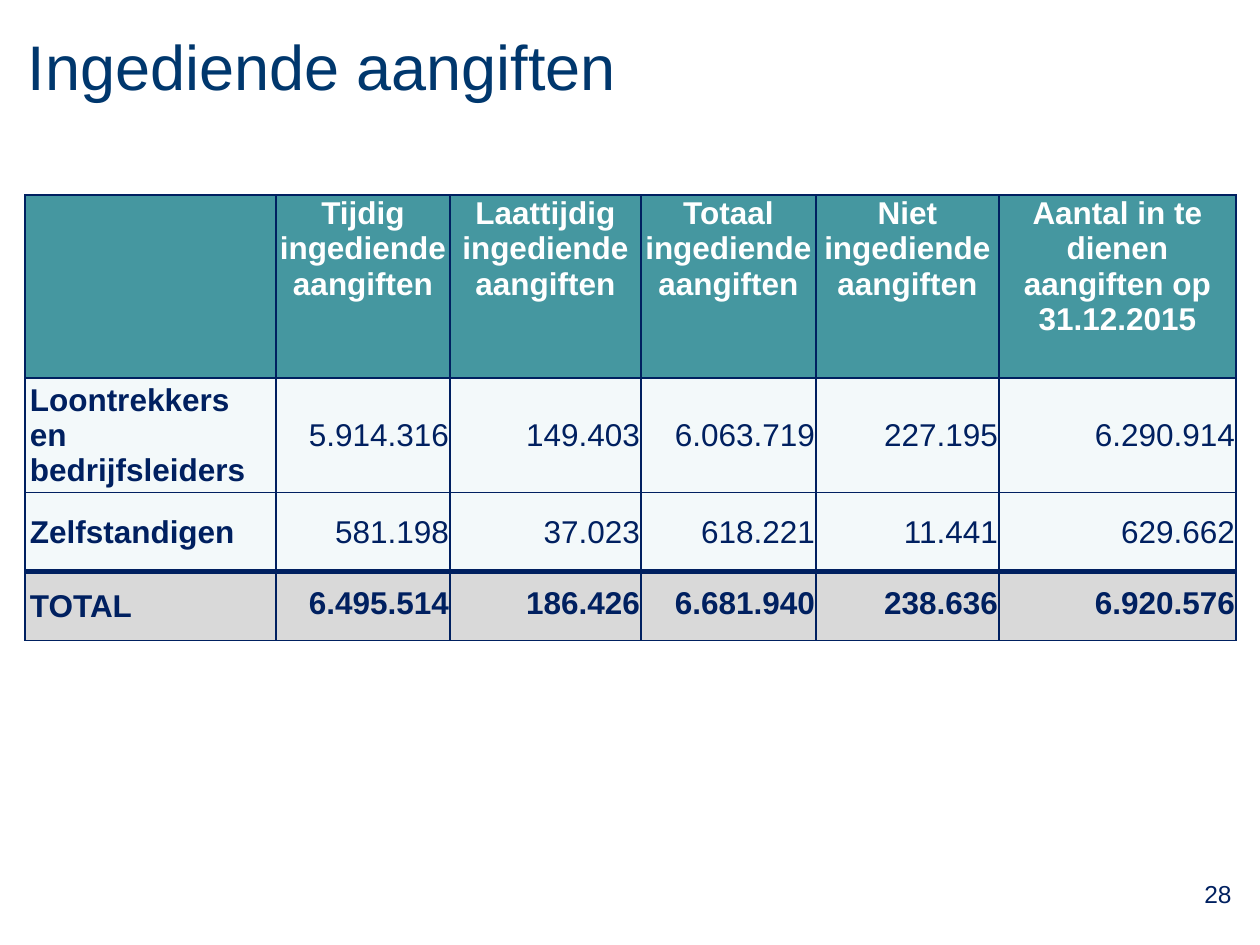
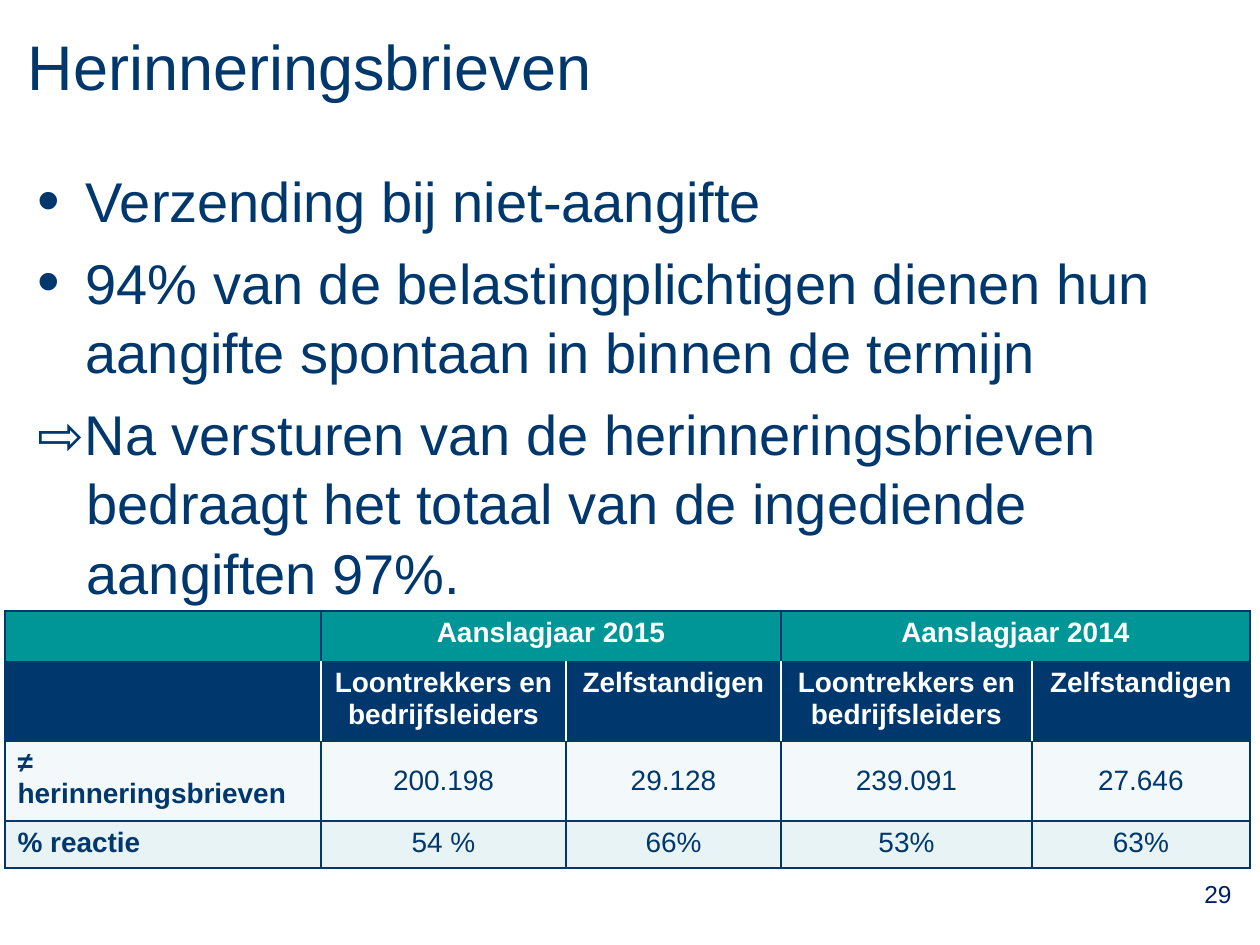
from lxml import etree
from pptx import Presentation
from pptx import util as u
from pptx.dml.color import RGBColor
from pptx.enum import text
from pptx.oxml import ns

PX = 914400 / 126
FONT = "Arial"
BLUE = RGBColor(0x00, 0x37, 0x6D)
NAVY = RGBColor(0x00, 0x20, 0x60)
WHITE = RGBColor(0xFF, 0xFF, 0xFF)
TEAL = RGBColor(0x45, 0x97, 0xA0)
GREEN = RGBColor(0x00, 0x96, 0x97)
PALE = RGBColor(0xF3, 0xF9, 0xFA)
PALE_GREEN = RGBColor(0xE7, 0xF3, 0xF4)
GREY = RGBColor(0xD9, 0xD9, 0xD9)
LEFT, CENTER, RIGHT = text.PP_ALIGN.LEFT, text.PP_ALIGN.CENTER, text.PP_ALIGN.RIGHT
TOP, MIDDLE = text.MSO_ANCHOR.TOP, text.MSO_ANCHOR.MIDDLE


def add_text(p, words, size, color, align=LEFT, bold=False):
    p.alignment = align
    r = p.add_run()
    r.text = words
    r.font.name, r.font.size, r.font.bold = FONT, u.Pt(size), bold
    r.font.color.rgb = color


def paint_cell(cell, fill, borders):
    """Fill a cell and draw its borders, given as side: (colour, points)."""
    cell.fill.solid()
    cell.fill.fore_color.rgb = fill
    tcPr = cell._tc.get_or_add_tcPr()
    for i, side in enumerate("LRTB"):
        color, width = borders[side]
        ln = etree.Element(ns.qn(f"a:ln{side}"), w=str(u.Pt(width)))
        solid = etree.SubElement(ln, ns.qn("a:solidFill"))
        etree.SubElement(solid, ns.qn("a:srgbClr"), val=str(color))
        tcPr.insert(i, ln)


prs = Presentation()
prs.slide_width, prs.slide_height = u.Inches(10), u.Inches(7.5)

# Shared title and page number
slides = []
for layout, title, number in [(5, "Ingediende aangiften", "28"),
                              (1, "Herinneringsbrieven", "29")]:
    s = prs.slides.add_slide(prs.slide_layouts[layout])
    sp = s.shapes.title
    sp.left, sp.top, sp.width, sp.height = [int(v * PX) for v in (15, 14, 1181, 102)]
    tf = sp.text_frame
    tf.auto_size, tf.vertical_anchor = text.MSO_AUTO_SIZE.NONE, MIDDLE
    add_text(tf.paragraphs[0], title, 36, BLUE)
    sp = s.shapes.add_textbox(*[int(v * PX) for v in (1171, 873, 94, 66)])
    sp.text_frame.word_wrap = True
    add_text(sp.text_frame.paragraphs[0], number, 14, NAVY, CENTER)
    slides.append(s)
returns_slide, reminders_slide = slides

# Bulleted list on reminder letters
sp = reminders_slide.placeholders[1]
sp.left, sp.top, sp.width, sp.height = [int(v * PX) for v in (25, 158, 1211, 760)]
tf = sp.text_frame
tf.auto_size = text.MSO_AUTO_SIZE.NONE
points = [
    ("Verzending bij niet-aangifte", 48, True),
    ("94% van de belastingplichtigen dienen hun aangifte spontaan in binnen de termijn",
     48, True),
    ("⇨Na versturen van de herinneringsbrieven bedraagt het totaal van de "
     "ingediende aangiften 97%.", 49, False),
]
for i, (words, indent, bulleted) in enumerate(points):
    p = tf.add_paragraph() if i else tf.paragraphs[0]
    pPr = p._p.get_or_add_pPr()
    pPr.set("marL", str(int(indent * PX)))
    pPr.set("indent", str(int(-indent * PX)))
    if bulleted:
        clr = etree.SubElement(pPr, ns.qn("a:buClr"))
        etree.SubElement(clr, ns.qn("a:srgbClr"), val=str(BLUE))
        etree.SubElement(pPr, ns.qn("a:buSzPct"), val="115000")
        etree.SubElement(pPr, ns.qn("a:buFont"), typeface=FONT)
        etree.SubElement(pPr, ns.qn("a:buChar"), char="•")
    else:
        etree.SubElement(pPr, ns.qn("a:buNone"))
    p.line_spacing = 1.04
    p.space_before = u.Pt(6.4 if i else 0)
    add_text(p, words, 32, BLUE)

# Table of filed returns
rows = [
    ["", "Tijdig ingediende aangiften", "Laattijdig ingediende aangiften",
     "Totaal ingediende aangiften", "Niet ingediende aangiften",
     "Aantal in te dienen aangiften op 31.12.2015"],
    ["Loontrekkers en bedrijfsleiders", "5.914.316", "149.403", "6.063.719",
     "227.195", "6.290.914"],
    ["Zelfstandigen", "581.198", "37.023", "618.221", "11.441", "629.662"],
    ["TOTAL", "6.495.514", "186.426", "6.681.940", "238.636", "6.920.576"],
]
widths, heights = [251, 174, 191, 175, 183, 237], [183, 108, 79, 69]
fills = [TEAL, PALE, PALE, GREY]
frame = returns_slide.shapes.add_table(
    4, 6, *[int(v * PX) for v in (25, 195, sum(widths), sum(heights))])
table = frame.table
for column, width in zip(table.columns, widths):
    column.width = int(width * PX)
for r, row in enumerate(rows):
    table.rows[r].height = int(heights[r] * PX)
    header, total = r == 0, r == 3
    for c, words in enumerate(row):
        cell = table.cell(r, c)
        borders = dict.fromkeys("LRTB", (NAVY, 1))
        if r == 2:
            borders["B"] = (NAVY, 3)
        if total:
            borders["T"] = (NAVY, 3)
        paint_cell(cell, fills[r], borders)
        cell.vertical_anchor = TOP if header else MIDDLE
        cell.margin_left = int((1 if c or header else 5) * PX)
        cell.margin_right = cell.margin_top = int(PX)
        cell.margin_bottom = int((5 if total and c else 0) * PX)
        align = CENTER if header else RIGHT if c else LEFT
        add_text(cell.text_frame.paragraphs[0], words, 18, WHITE if header else NAVY,
                 align, header or total or c == 0)

# Table of reminder letters
rows = [
    ["", "Aanslagjaar 2015", "", "Aanslagjaar 2014", ""],
    [""] + ["Loontrekkers en bedrijfsleiders", "Zelfstandigen"] * 2,
    ["≠ herinneringsbrieven", "200.198", "29.128", "239.091", "27.646"],
    ["% reactie", "54 %", "66%", "53%", "63%"],
]
widths, heights = [316, 245, 215, 251, 218], [46, 77, 75, 47]
fills = [GREEN, BLUE, PALE, PALE_GREEN]
frame = reminders_slide.shapes.add_table(
    4, 5, *[int(v * PX) for v in (5, 611, sum(widths), sum(heights))])
table = frame.table
for column, width in zip(table.columns, widths):
    column.width = int(width * PX)
for r, row in enumerate(rows):
    table.rows[r].height = int(heights[r] * PX)
    header = r < 2
    for c, words in enumerate(row):
        cell = table.cell(r, c)
        borders = dict.fromkeys("LRTB", (BLUE, 1))
        if r == 1 and c > 0:
            borders["L"] = (WHITE, 1)
        if r == 1 and c < 4:
            borders["R"] = (WHITE, 1)
        paint_cell(cell, fills[r], borders)
        cell.vertical_anchor = MIDDLE if r == 2 and c else TOP
        add_text(cell.text_frame.paragraphs[0], words, 16, WHITE if header else BLUE,
                 CENTER if header or c else LEFT, header or c == 0)
for c in (1, 3):
    table.cell(0, c).merge(table.cell(0, c + 1))

prs.save("out.pptx")
